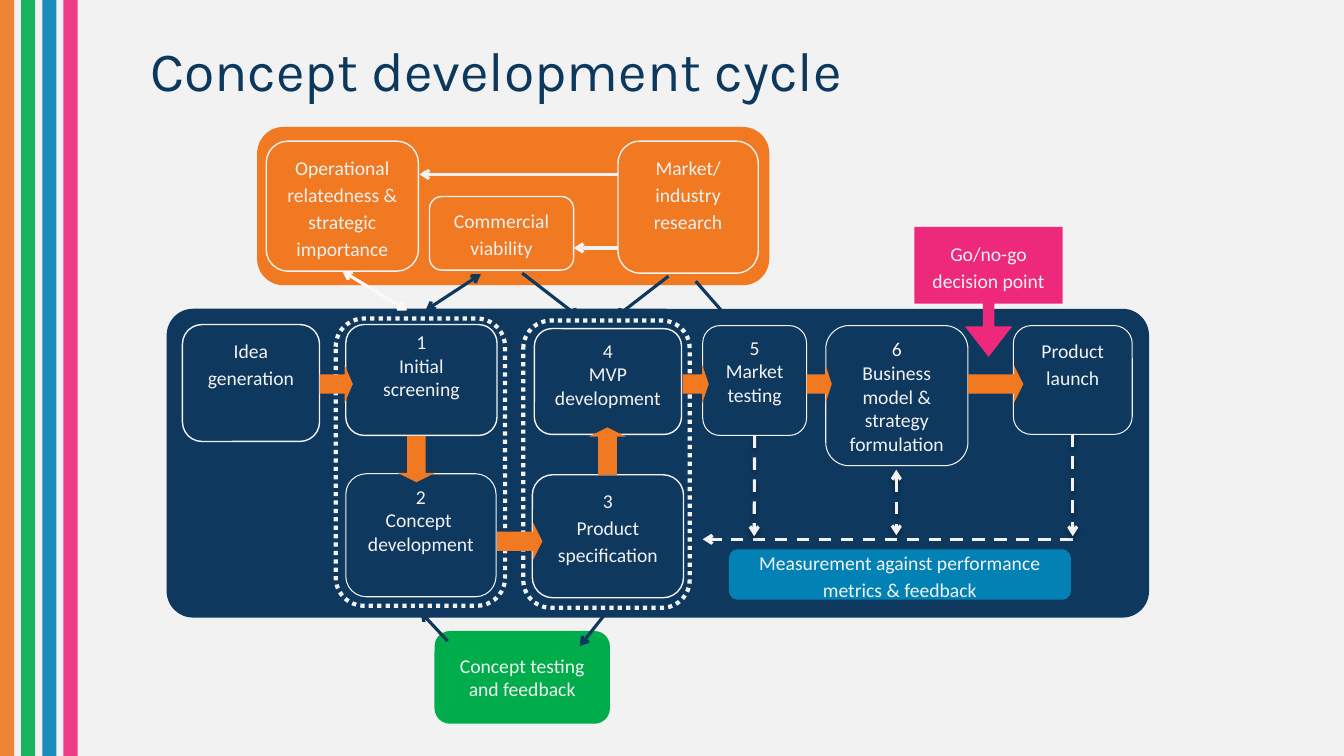
import pptx
import pptx.util
import pptx.dml.color
import pptx.enum.dml
import pptx.enum.shapes
import pptx.enum.text
import pptx.oxml
import pptx.oxml.ns
import pptx.oxml.xmlchemy

Inches = pptx.util.Inches
Pt = pptx.util.Pt
RGBColor = pptx.dml.color.RGBColor
Kind = pptx.enum.shapes.MSO_SHAPE
Dash = pptx.enum.dml.MSO_LINE
Align = pptx.enum.text.PP_ALIGN
Anchor = pptx.enum.text.MSO_ANCHOR
qn = pptx.oxml.ns.qn
new_element = pptx.oxml.xmlchemy.OxmlElement

ORANGE = RGBColor(0xF0, 0x79, 0x21)
GREEN = RGBColor(0x01, 0xAD, 0x4B)
BLUE = RGBColor(0x02, 0x81, 0xB4)
PINK = RGBColor(0xEE, 0x29, 0x7B)
NAVY = RGBColor(0x0E, 0x38, 0x5E)
TITLE_NAVY = RGBColor(0x0D, 0x38, 0x5E)
PALE = RGBColor(0xF2, 0xF2, 0xF2)
CREAM = RGBColor(0xFE, 0xF8, 0xF4)

TITLE = "Concept development cycle"
STRIPES = [ORANGE, GREEN, BLUE, PINK]
STRIPE_PITCH, STRIPE_WIDTH = 0.21, 0.14

PANELS = [
    ((2.55, 1.26, 5.08, 1.57), ORANGE, None),
    ((1.66, 3.07, 9.73, 3.05), NAVY, 0.084),
]
OUTLINED_BOXES = {
    "screening": ((3.43, 3.22, 1.5, 1.1), 1, ["1", "Initial screening"], dict(top=0)),
    "idea": ((1.81, 3.22, 1.36, 1.16), 1, ["Idea", "generation"], dict(spacing=1.15)),
    "strategy": ((8.19, 3.23, 1.41, 1.39), 0.75,
                 ["6", "Business model & strategy formulation"], {}),
    "launch": ((10.05, 3.23, 1.18, 1.08), 0.75, ["Product launch"], dict(spacing=1.15)),
    "concept": ((3.43, 4.7, 1.49, 1.22), 0.75, ["2", "Concept ", "development"], {}),
    "specification": ((5.28, 4.71, 1.5, 1.22), 1,
                      ["3", "Product specification"], dict(spacing=1.15)),
    "mvp": ((5.3, 3.26, 1.46, 1.05), 1, ["4", "MVP development"], {}),
    "viability": ((4.26, 1.95, 1.43, 0.73), 1,
                  ["Commercial viability"], dict(spacing=1.15, after=10)),
    "testing": ((6.97, 3.23, 1.03, 1.09), 0.75, ["5", "Market testing"], {}),
    "research": ((6.13, 1.4, 1.39, 1.31), 1,
                 ["Market/ industry research"], dict(spacing=1.15)),
    "relatedness": ((2.64, 1.4, 1.51, 1.29), 1,
                    ["Operational relatedness & strategic importance"],
                    dict(spacing=1.15, after=10)),
}
STAGE_FRAMES = [(3.33, 3.16, 1.68, 2.85), (5.19, 3.18, 1.65, 2.85)]
BLOCK_ARROWS = [
    ((3.9, 4.37, 0.46, 0.37), 90),
    ((5.79, 4.29, 0.47, 0.37), 270),
    ((9.6, 3.62, 0.55, 0.38), 0),
    ((4.93, 5.18, 0.45, 0.38), 0),
    ((3.17, 3.62, 0.33, 0.38), 0),
    ((6.77, 3.62, 0.26, 0.38), 0),
    ((8, 3.62, 0.25, 0.38), 0),
]
FILLED_BOXES = [
    (Kind.DOWN_ARROW_CALLOUT, (9.07, 2.25, 1.47, 1.29), PINK, [0.089, 0.183, 0.235, 0.591],
     ["Go/no-go decision point"], dict(spacing=1.15, after=10)),
    (Kind.ROUNDED_RECTANGLE, (7.23, 5.45, 3.39, 0.5), BLUE, [],
     ["Measurement against performance metrics & feedback"], dict(spacing=1.15, after=10)),
    (Kind.ROUNDED_RECTANGLE, (4.31, 6.26, 1.74, 0.92), GREEN, [],
     ["Concept testing and feedback"], {}),
]
LINKS = [
    ((8.89, 4.66), (8.89, 5.31), PALE, dict(double=True, dashed=True, shadow=True)),
    ((10.64, 5.35), (6.97, 5.35), PALE, dict(dashed=True)),
    ((7.48, 4.32), (7.48, 5.32), PALE, dict(dashed=True, shadow=True, source="testing")),
    ((10.64, 4.31), (10.64, 5.32), PALE, dict(dashed=True, shadow=True, source="launch")),
    ((3.39, 2.68), (4.04, 3.08), CREAM, dict(double=True, source="relatedness")),
    ((4.77, 2.72), (4.22, 3.08), NAVY, dict(double=True)),
    ((5.18, 2.71), (5.75, 3.15), NAVY, {}),
    ((6.13, 2.46), (5.69, 2.46), PALE, {}),
    ((6.63, 2.74), (6.1, 3.15), NAVY, {}),
    ((6.13, 1.73), (4.16, 1.73), PALE, {}),
    ((6.9, 2.79), (7.26, 3.2), NAVY, {}),
    ((6.02, 6.07), (5.75, 6.41), NAVY, {}),
    ((4.44, 6.36), (4.17, 6.07), NAVY, {}),
]
SHADOW = ('<a:outerShdw xmlns:a="http://schemas.openxmlformats.org/drawingml/2006/main" '
          'blurRad="44450" dist="27940" dir="5400000" rotWithShape="0">'
          '<a:srgbClr val="000000"><a:alpha val="32000"/></a:srgbClr></a:outerShdw>')


def write_text(box, paragraphs, size=14, font="Calibri", color=PALE, align=Align.CENTER,
               anchor=Anchor.TOP, spacing=None, after=None, top=0.05):
    frame = box.text_frame
    frame.word_wrap = True
    frame.vertical_anchor = anchor
    frame.margin_top = Inches(top)
    frame.text = "\n".join(paragraphs)
    for para in frame.paragraphs:
        para.alignment = align
        if spacing is not None:
            para.line_spacing = spacing
        if after is not None:
            para.space_after = Pt(after)
        para.font.size = Pt(size)
        para.font.name = font
        para.font.color.rgb = color


def add_box(page, kind, place, fill=None, line=None, width=1, dash=None, adjust=()):
    box = page.shapes.add_shape(kind, *map(Inches, place))
    box.shadow.inherit = False
    if fill is None:
        box.fill.background()
    else:
        box.fill.solid()
        box.fill.fore_color.rgb = fill
    if line is None:
        box.line.fill.background()
    else:
        box.line.color.rgb = line
        box.line.width = Pt(width)
        if dash is not None:
            box.line.dash_style = dash
    for index, value in enumerate(adjust):
        box.adjustments[index] = value
    return box


def add_link(page, start, end, color, source=None, double=False, dashed=False, shadow=False):
    link = page.shapes.add_connector(pptx.enum.shapes.MSO_CONNECTOR.STRAIGHT,
                                     *map(Inches, start + end))
    if source is not None:
        link.begin_connect(source, 2)
    link.line.color.rgb = color
    link.line.width = Pt(2.25)
    if dashed:
        link.line.dash_style = Dash.DASH
    properties = link._element.spPr
    outline = properties.find(qn("a:ln"))
    for tag in ["a:headEnd", "a:tailEnd"] if double else ["a:tailEnd"]:
        tip = new_element(tag)
        tip.set("type", "arrow")
        outline.append(tip)
    effects = new_element("a:effectLst")
    if shadow:
        effects.append(pptx.oxml.parse_xml(SHADOW))
    properties.append(effects)


def main():
    deck = pptx.Presentation()
    deck.slide_width, deck.slide_height = Inches(13.33), Inches(7.5)
    page = deck.slides.add_slide(deck.slide_layouts[6])
    page.background.fill.solid()
    page.background.fill.fore_color.rgb = PALE

    for index, color in enumerate(STRIPES):
        stripe = add_box(page, Kind.RECTANGLE,
                         (index * STRIPE_PITCH, 0, STRIPE_WIDTH, 7.5), color)
        alpha = new_element("a:alpha")
        alpha.set("val", "90000")
        stripe._element.spPr.find(qn("a:solidFill"))[0].append(alpha)

    title = page.shapes.add_textbox(*map(Inches, (1.39, 0.4, 8.76, 0.65)))
    write_text(title, [TITLE], size=39.6, font="Karla", color=TITLE_NAVY,
               align=Align.LEFT, anchor=Anchor.MIDDLE, spacing=0.9)

    for place, color, corner in PANELS:
        add_box(page, Kind.ROUNDED_RECTANGLE, place, color, color if corner else None,
                adjust=[corner] if corner else [])
    boxes = {}
    for name, (place, width, paragraphs, layout) in OUTLINED_BOXES.items():
        boxes[name] = add_box(page, Kind.ROUNDED_RECTANGLE, place, line=PALE, width=width)
        write_text(boxes[name], paragraphs, **layout)
    for place in STAGE_FRAMES:
        add_box(page, Kind.ROUNDED_RECTANGLE, place, line=PALE, width=3, dash=Dash.ROUND_DOT)
    for place, turn in BLOCK_ARROWS:
        arrow = add_box(page, Kind.RIGHT_ARROW, place, ORANGE, adjust=[0.5, 0.25])
        arrow.rotation = turn
    for kind, place, color, adjust, paragraphs, layout in FILLED_BOXES:
        box = add_box(page, kind, place, color, adjust=adjust)
        write_text(box, paragraphs, anchor=Anchor.MIDDLE, **layout)
    for start, end, color, style in LINKS:
        source = boxes.get(style.get("source"))
        add_link(page, start, end, color, **{**style, "source": source})

    deck.save("out.pptx")


if __name__ == "__main__":
    main()
